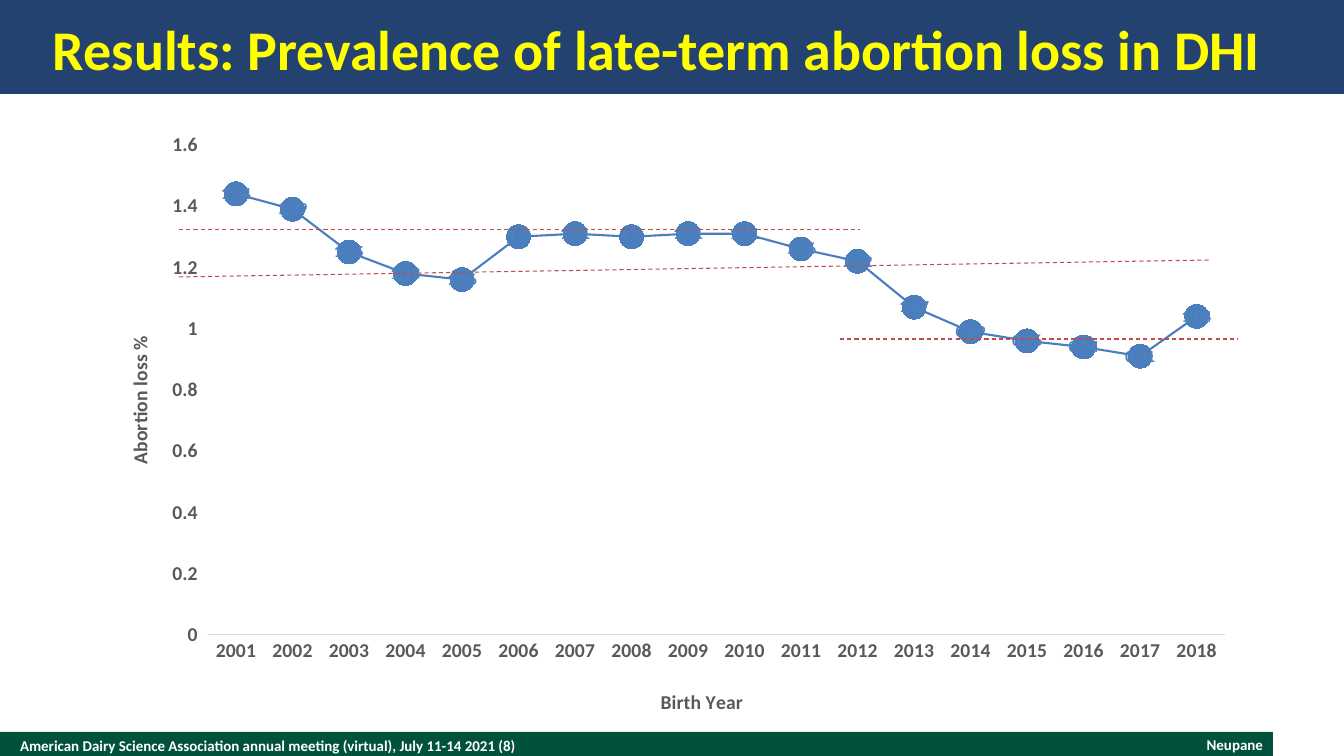
from pptx import Presentation
from pptx.chart.data import CategoryChartData
from pptx.dml.color import RGBColor
from pptx.enum.chart import (XL_CHART_TYPE, XL_LABEL_POSITION as LABEL_POS,
                             XL_MARKER_STYLE as MARKER, XL_TICK_MARK as TICK)
from pptx.enum.dml import MSO_LINE
from pptx.enum.shapes import MSO_CONNECTOR, MSO_SHAPE
from pptx.enum.text import MSO_ANCHOR, PP_ALIGN
from pptx.oxml import parse_xml
from pptx.oxml.ns import nsdecls, qn
from pptx.util import Emu, Pt

PX = 914400 / 100.8
COLORS = {name: RGBColor.from_string(value) for name, value in {
    "green": "00523C", "navy": "244270", "yellow": "FFFF00", "white": "FFFFFF",
    "gray": "595959", "axis": "D9D9D9", "series": "4B7EBC", "label": "4F81BD",
    "red": "BF4C48"}.items()}


def px(*lengths):
    return [Emu(round(n * PX)) for n in lengths]


def set_layout(parent, index, **fractions):
    """Place a chart part by fractions of the chart area."""
    for old in parent.findall(qn("c:layout")):
        parent.remove(old)
    inner = '<c:layoutTarget val="inner"/>' if "w" in fractions else ""
    modes = "".join(f'<c:{k}Mode val="edge"/>' for k in "xy")
    values = "".join(f'<c:{k} val="{v}"/>' for k, v in fractions.items())
    parent.insert(index, parse_xml(
        f'<c:layout {nsdecls("c")}><c:manualLayout>{inner}{modes}{values}'
        '</c:manualLayout></c:layout>'))


prs = Presentation()
prs.slide_width, prs.slide_height = px(1344, 756)
slide = prs.slides.add_slide(prs.slide_layouts[6])

# Footer and title bars
for box, color in (((0, 732, 1273, 27), "green"), ((0, 0, 1344, 94), "navy")):
    s = slide.shapes.add_shape(MSO_SHAPE.RECTANGLE, *px(*box))
    s.shadow.inherit = False
    s.fill.solid()
    s.fill.fore_color.rgb = COLORS[color]
    s.line.fill.background()

# Title and footer text
for text, box, size, color, align in (
        ("American Dairy Science Association annual meeting (virtual), July 11-14 2021 (8)",
         (20, 732, 874, 27), 10.7, "white", PP_ALIGN.LEFT),
        ("Neupane", (968, 736, 295, 18), 10.7, "white", PP_ALIGN.RIGHT),
        ("Results: Prevalence of late-term abortion loss in DHI",
         (53, 13, 1237, 71), 40, "yellow", PP_ALIGN.LEFT)):
    tf = slide.shapes.add_textbox(*px(*box)).text_frame
    for name, value in {"word_wrap": True, "vertical_anchor": MSO_ANCHOR.MIDDLE,
                        "margin_left": 0, "margin_right": 0,
                        "margin_top": 0, "margin_bottom": 0}.items():
        setattr(tf, name, value)
    p = tf.paragraphs[0]
    p.alignment = align
    r = p.add_run()
    r.text = text
    for name, value in {"name": "Calibri", "size": Pt(size), "bold": True}.items():
        setattr(r.font, name, value)
    r.font.color.rgb = COLORS[color]

# Abortion loss by birth year
data = CategoryChartData()
data.categories = [str(year) for year in range(2001, 2019)]
data.add_series("Series 1", (1.44, 1.39, 1.25, 1.18, 1.16, 1.3, 1.31, 1.3, 1.31,
                             1.31, 1.26, 1.22, 1.07, 0.99, 0.96, 0.94, 0.91, 1.04))
chart = slide.shapes.add_chart(XL_CHART_TYPE.LINE_MARKERS,
                               *px(96, 120, 1152, 608), data).chart
chart.has_legend = chart.has_title = False
chart.font.name, chart.font.size = "Calibri", Pt(10)
plot = chart.plots[0]
plot.vary_by_categories = False
set_layout(chart._chartSpace.chart.plotArea, 0, x=0.097, y=0.041, w=0.883, h=0.806)

# Series line, markers and value labels
series = plot.series[0]
series.smooth = False
series.format.line.color.rgb = COLORS["series"]
series.format.line.width = Pt(1.5)
series.marker.style, series.marker.size = MARKER.CIRCLE, 17
series.marker.format.fill.solid()
series.marker.format.fill.fore_color.rgb = COLORS["series"]
series.marker.format.line.fill.background()
labels = series.data_labels
labels.show_value, labels.position = True, LABEL_POS.CENTER
for name, value in {"name": "Calibri", "size": Pt(12), "bold": True}.items():
    setattr(labels.font, name, value)
labels.font.color.rgb = COLORS["label"]

# Axes and their titles
cat_axis, val_axis = chart.category_axis, chart.value_axis
for axis, text, tick, x, y in (
        (cat_axis, "Birth Year", TICK.NONE, 0.487, 0.928),
        (val_axis, "Abortion loss %", TICK.OUTSIDE, 0.023, 0.349)):
    axis.has_major_gridlines = False
    axis.major_tick_mark, axis.minor_tick_mark = tick, TICK.NONE
    tf = axis.axis_title.text_frame
    r = tf.paragraphs[0].add_run()
    r.text = text
    for font in (axis.tick_labels.font, r.font):
        for name, value in {"name": "Calibri", "size": Pt(14), "bold": True}.items():
            setattr(font, name, value)
        font.color.rgb = COLORS["gray"]
    set_layout(axis.axis_title._element, 1, x=x, y=y)
body = val_axis.axis_title.text_frame._txBody.find(qn("a:bodyPr"))
body.set("rot", "-5400000")
body.set("vert", "horz")
cat_axis.format.line.color.rgb = COLORS["axis"]
cat_axis.format.line.width = Pt(0.75)
val_axis.format.line.fill.background()
for name, value in {"minimum_scale": 0, "maximum_scale": 1.6, "major_unit": 0.2}.items():
    setattr(val_axis, name, value)

# Dashed reference lines
for ends in ((179, 277, 1211, 260), (179, 230, 860, 230), (840, 339, 1238, 339)):
    line = slide.shapes.add_connector(MSO_CONNECTOR.STRAIGHT, *px(*ends))
    line.line.color.rgb = COLORS["red"]
    line.line.width = Pt(0.75)
    line.line.dash_style = MSO_LINE.DASH
    line._element.spPr.append(parse_xml(f'<a:effectLst {nsdecls("a")}/>'))

prs.save("out.pptx")
